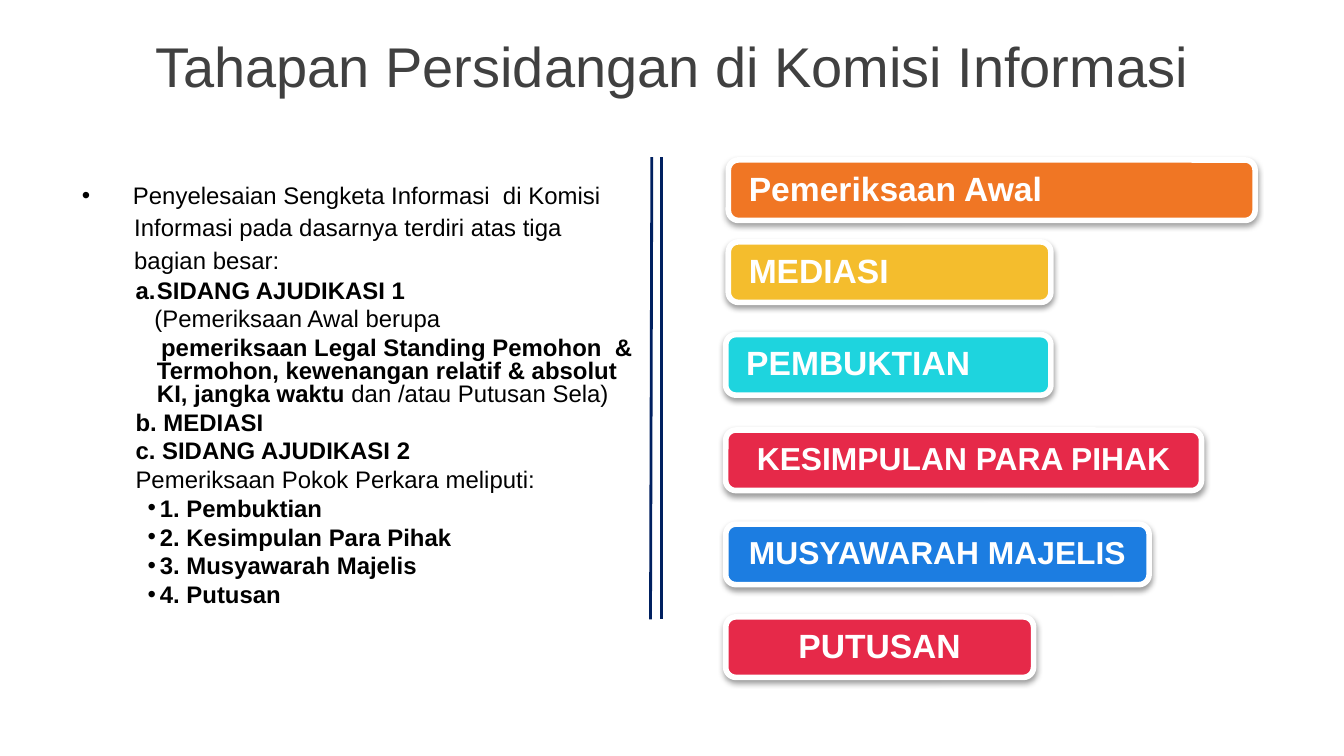
import lxml.etree
import pptx
import pptx.dml.color
import pptx.enum.shapes
import pptx.enum.text
import pptx.oxml.ns
import pptx.util

Pt = pptx.util.Pt
RGBColor = pptx.dml.color.RGBColor
ALIGN = pptx.enum.text.PP_ALIGN
MIDDLE = pptx.enum.text.MSO_ANCHOR.MIDDLE

BLACK = RGBColor(0x00, 0x00, 0x00)
WHITE = RGBColor(0xFF, 0xFF, 0xFF)
GREY = RGBColor(0x40, 0x40, 0x40)
NAVY = RGBColor(0x00, 0x20, 0x60)
ORANGE = RGBColor(0xF0, 0x76, 0x24)
YELLOW = RGBColor(0xF4, 0xBD, 0x2D)
CYAN = RGBColor(0x1E, 0xD4, 0xDE)
RED = RGBColor(0xE6, 0x29, 0x49)
BLUE = RGBColor(0x1C, 0x7D, 0xE1)

FONT = "Arial"
BAR_HEIGHT = 32.4

STAGES = [
    ("Pemeriksaan Awal", 390.2, 85.7, 282.2, ORANGE, 18, ALIGN.LEFT),
    ("MEDIASI", 390.2, 129.6, 172.8, YELLOW, 18, ALIGN.LEFT),
    ("PEMBUKTIAN", 388.8, 179.3, 174.2, CYAN, 18, ALIGN.LEFT),
    ("KESIMPULAN PARA PIHAK", 388.8, 230.4, 254.9, RED, 17, ALIGN.CENTER),
    ("MUSYAWARAH MAJELIS", 388.8, 280.8, 226.8, BLUE, 17, ALIGN.CENTER),
    ("PUTUSAN", 388.8, 330.5, 164.9, RED, 18, ALIGN.CENTER),
]

INTRO = (27.4, -27.4, 0.94, "•")
INTRO_MORE = (28.1, 0, 0.94, None)
LETTERED = (40.3, -11.5, 0.8, "auto")
NOTE = (38.9, 0, 0.8, None)
DETAIL = (40.3, 2.2, 0.8, None)
PLAIN = (28.8, 0, 0.8, None)
STEP = (41.8, -6.5, 0.8, "•")

OUTLINE = [
    (INTRO, [("Penyelesaian Sengketa Informasi  di Komisi", False)]),
    (INTRO_MORE, [("Informasi pada dasarnya terdiri atas tiga", False)]),
    (INTRO_MORE, [("bagian besar:", False)]),
    (LETTERED, [("SIDANG AJUDIKASI 1", True)]),
    (NOTE, [("(Pemeriksaan Awal berupa", False)]),
    (DETAIL, [
        ("pemeriksaan Legal Standing Pemohon  & Termohon, kewenangan "
         "relatif & absolut KI, jangka waktu ", True),
        ("dan /atau Putusan Sela)", False),
    ]),
    (PLAIN, [("b. MEDIASI", True)]),
    (PLAIN, [("c. SIDANG AJUDIKASI 2", True)]),
    (PLAIN, [("Pemeriksaan Pokok Perkara meliputi:", False)]),
    (STEP, [("1. Pembuktian", True)]),
    (STEP, [("2. Kesimpulan Para Pihak", True)]),
    (STEP, [("3. Musyawarah Majelis", True)]),
    (STEP, [("4. Putusan", True)]),
]


def add_xml(parent, tag, **attributes):
    return lxml.etree.SubElement(parent, pptx.oxml.ns.qn(tag), attributes)


def format_span(span, size, color, bold=False):
    span.font.name = FONT
    span.font.size = Pt(size)
    span.font.bold = bold
    span.font.color.rgb = color


def set_title(page, text):
    title = page.shapes.title
    title.left, title.top, title.width, title.height = Pt(0), Pt(0), Pt(720), Pt(69.8)
    frame = title.text_frame
    frame.text = text
    frame.vertical_anchor = MIDDLE
    para = frame.paragraphs[0]
    para.alignment = ALIGN.CENTER
    format_span(para.runs[0], 30, GREY)


def add_soft_shadow(shape):
    shape.shadow.inherit = False
    effects = shape._element.spPr.find(pptx.oxml.ns.qn("a:effectLst"))
    shadow = add_xml(effects, "a:outerShdw", blurRad=str(Pt(3.1)), dist=str(Pt(1.6)),
                     dir="5400000", rotWithShape="0")
    color = add_xml(shadow, "a:srgbClr", val=str(BLACK))
    add_xml(color, "a:alpha", val="38000")


def add_stage(page, text, left, top, width, color, size, alignment):
    bar = page.shapes.add_shape(pptx.enum.shapes.MSO_SHAPE.ROUNDED_RECTANGLE,
                                Pt(left), Pt(top), Pt(width), Pt(BAR_HEIGHT))
    bar.fill.solid()
    bar.fill.fore_color.rgb = color
    bar.line.color.rgb = WHITE
    bar.line.width = Pt(3)
    add_soft_shadow(bar)
    frame = bar.text_frame
    frame.text = text
    frame.word_wrap = True
    frame.vertical_anchor = MIDDLE
    frame.margin_left = frame.margin_right = Pt(9.4)
    frame.margin_top = frame.margin_bottom = Pt(0)
    para = frame.paragraphs[0]
    para.alignment = alignment
    para.line_spacing = 0.9
    format_span(para.runs[0], size, WHITE, True)


def format_outline_para(para, margin, indent, spacing, bullet):
    para.alignment = ALIGN.LEFT
    para.line_spacing = spacing
    para.space_before = Pt(3.1)
    properties = para._p.get_or_add_pPr()
    properties.set("marL", str(Pt(margin)))
    properties.set("indent", str(Pt(indent)))
    if bullet is None:
        add_xml(properties, "a:buNone")
    elif bullet == "auto":
        add_xml(properties, "a:buFont", typeface=FONT)
        add_xml(properties, "a:buAutoNum", type="alphaLcPeriod")
    else:
        add_xml(properties, "a:buFont", typeface=FONT)
        add_xml(properties, "a:buChar", char=bullet)


def add_outline(page):
    box = page.shapes.add_textbox(Pt(36.7), Pt(94.3), Pt(318.2), Pt(267.1))
    frame = box.text_frame
    frame.word_wrap = True
    for index, (style, pieces) in enumerate(OUTLINE):
        para = frame.add_paragraph() if index else frame.paragraphs[0]
        format_outline_para(para, *style)
        for text, bold in pieces:
            span = para.add_run()
            span.text = text
            format_span(span, 12.8, BLACK, bold)


def add_divider(page, top_x, bottom_x):
    line = page.shapes.add_connector(pptx.enum.shapes.MSO_CONNECTOR.STRAIGHT,
                                     Pt(top_x), Pt(84.2), Pt(bottom_x), Pt(331.9))
    line.line.color.rgb = NAVY
    line.line.width = Pt(1.5)
    add_xml(line._element.spPr, "a:effectLst")


def main():
    deck = pptx.Presentation()
    deck.slide_width, deck.slide_height = Pt(720), Pt(405)
    page = deck.slides.add_slide(deck.slide_layouts[5])
    set_title(page, "Tahapan Persidangan di Komisi Informasi")
    for stage in STAGES:
        add_stage(page, *stage)
    add_outline(page)
    add_divider(page, 349.2, 348.5)
    add_divider(page, 354.2, 354.2)
    deck.save("out.pptx")


if __name__ == "__main__":
    main()
